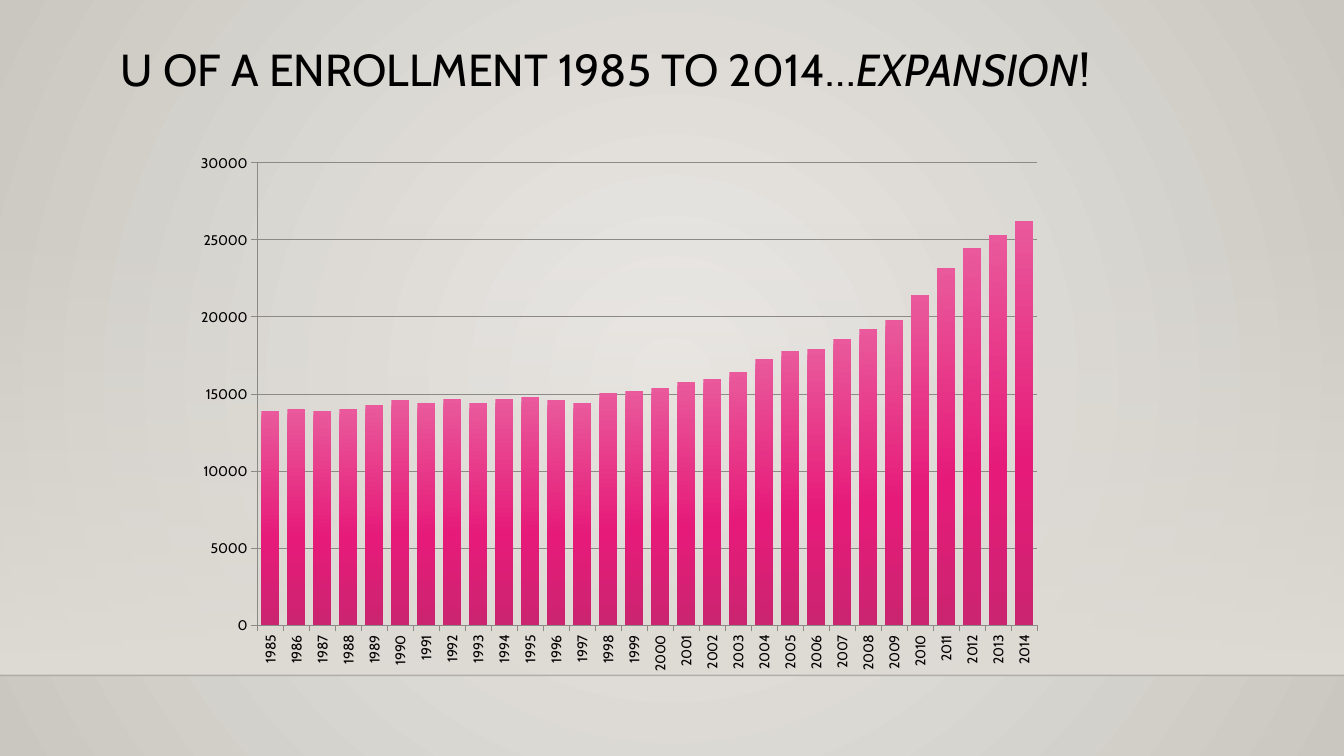
from dataclasses import dataclass

from lxml import etree
from pptx import Presentation
from pptx.chart.data import CategoryChartData
from pptx.dml.color import RGBColor
from pptx.enum.chart import XL_CHART_TYPE as ChartType, XL_TICK_MARK as TickMark
from pptx.enum.shapes import MSO_CONNECTOR as Connector, MSO_SHAPE as Shape
from pptx.enum.text import MSO_ANCHOR as Anchor, MSO_AUTO_SIZE as AutoSize, PP_ALIGN as Align
from pptx.oxml import parse_xml
from pptx.oxml.ns import nsdecls, qn
from pptx.util import Inches, Pt

FIRST_YEAR = 1985
ENROLLMENT = [
    13900, 14000, 13900, 14000, 14300, 14600, 14400, 14700, 14400, 14700,
    14800, 14600, 14400, 15100, 15200, 15400, 15800, 16000, 16400, 17300,
    17800, 17900, 18600, 19200, 19800, 21400, 23200, 24500, 25300, 26200,
]


@dataclass(frozen=True)
class Theme:
    font: str = "Cabin"
    title_size: int = 32
    label_size: int = 10
    text: str = "000000"
    rule: str = "000001"
    grid: str = "8C8A87"
    backdrop: tuple = ((0, "ECEAE7", 100), (100, "CAC7C1", 100))
    floor: tuple = ((0, "DFDBD5", 0), (100, "DFDBD5", 100))
    bar: tuple = ((0, "E9599B", 100), (60, "E61A79", 100), (100, "CB2571", 100))


class SlideBuilder:
    columns, rows = 80, 45

    def __init__(self, presentation, theme):
        self.theme = theme
        self.cell_width = presentation.slide_width / self.columns
        self.cell_height = presentation.slide_height / self.rows
        self.slide = presentation.slides.add_slide(presentation.slide_layouts[5])

    def place(self, column, row, width, height):
        return (int(column * self.cell_width), int(row * self.cell_height),
                int(width * self.cell_width), int(height * self.cell_height))

    def style_font(self, font, size):
        font.name = self.theme.font
        font.size = Pt(size)
        font.color.rgb = RGBColor.from_string(self.theme.text)

    def apply_gradient(self, fill, element, stops, radial=False):
        fill.solid()
        fill.fore_color.rgb = RGBColor.from_string(stops[0][1])
        solid = next(element.iter(qn("a:solidFill")))
        stop_xml = "".join(
            f'<a:gs pos="{position * 1000}"><a:srgbClr val="{colour}">'
            f'<a:alpha val="{alpha * 1000}"/></a:srgbClr></a:gs>'
            for position, colour, alpha in stops)
        direction = (
            '<a:path path="circle"><a:fillToRect l="50000" t="50000" r="50000" b="50000"/></a:path>'
            if radial else '<a:lin ang="5400000" scaled="0"/>')
        solid.getparent().replace(solid, parse_xml(
            f'<a:gradFill {nsdecls("a")} rotWithShape="1">'
            f'<a:gsLst>{stop_xml}</a:gsLst>{direction}</a:gradFill>'))

    def backdrop(self):
        self.apply_gradient(self.slide.background.fill, self.slide.element,
                            self.theme.backdrop, radial=True)

    def panel(self, *cells):
        shape = self.slide.shapes.add_shape(Shape.RECTANGLE, *self.place(*cells))
        shape.shadow.inherit = False
        self.apply_gradient(shape.fill, shape.element, self.theme.floor)
        shape.line.fill.background()

    def rule(self, row):
        left, top, width, _ = self.place(0, row, self.columns, 0)
        connector = self.slide.shapes.add_connector(
            Connector.STRAIGHT, left, top, left + width, top)
        connector.line.width = Pt(1)
        connector.line.color.rgb = RGBColor.from_string(self.theme.rule)
        properties = connector.element.spPr
        colour = next(properties.iter(qn("a:srgbClr")))
        etree.SubElement(colour, qn("a:alpha")).set("val", "20000")
        etree.SubElement(properties, qn("a:effectLst"))

    def title(self, pieces, *cells):
        title = self.slide.shapes.title
        title.left, title.top, title.width, title.height = self.place(*cells)
        text_frame = title.text_frame
        text_frame.word_wrap = True
        text_frame.auto_size = AutoSize.NONE
        text_frame.vertical_anchor = Anchor.TOP
        paragraph = text_frame.paragraphs[0]
        paragraph.alignment = Align.LEFT
        paragraph.line_spacing = 0.9
        for text, italic in pieces:
            run = paragraph.add_run()
            run.text = text
            self.style_font(run.font, self.theme.title_size)
            run.font.italic = italic

    def column_chart(self, categories, values, plot_area, *cells):
        data = CategoryChartData(number_format="0")
        data.categories = categories
        data.add_series("Series 1", values)
        chart = self.slide.shapes.add_chart(
            ChartType.COLUMN_CLUSTERED, *self.place(*cells), data).chart
        chart.has_legend = False
        chart.has_title = False
        self.style_font(chart.font, self.theme.label_size)
        plot = chart.plots[0]
        plot.gap_width, plot.overlap = 46, -2
        plot.vary_by_categories = False
        series = plot.series[0]
        self.apply_gradient(series.format.fill, series._element, self.theme.bar)
        grid_colour = RGBColor.from_string(self.theme.grid)
        value_axis, category_axis = chart.value_axis, chart.category_axis
        value_axis.minimum_scale, value_axis.maximum_scale = 0, 30000
        value_axis.major_unit = 5000
        value_axis.has_major_gridlines = True
        value_axis.tick_labels.number_format = "0"
        value_axis.tick_labels.number_format_is_linked = False
        for axis in (value_axis, category_axis):
            axis.major_tick_mark = TickMark.OUTSIDE
            axis.minor_tick_mark = TickMark.NONE
            axis.format.line.color.rgb = grid_colour
            axis.format.line.width = Pt(0.75)
            self.style_font(axis.tick_labels.font, self.theme.label_size)
        gridline = value_axis.major_gridlines.format.line
        gridline.color.rgb = grid_colour
        gridline.width = Pt(0.75)
        label_body = next(category_axis._element.iter(qn("a:bodyPr")))
        label_body.set("rot", "-5400000")
        label_body.set("vert", "horz")
        self.fix_plot_area(chart, plot_area)

    def fix_plot_area(self, chart, plot_area):
        area = next(chart._chartSpace.iter(qn("c:plotArea")))
        for layout in area.findall(qn("c:layout")):
            area.remove(layout)
        sizes = "".join(f'<c:{name} val="{share}"/>'
                        for name, share in zip("xywh", plot_area))
        area.insert(0, parse_xml(
            f'<c:layout {nsdecls("c")}><c:manualLayout><c:layoutTarget val="inner"/>'
            f'<c:xMode val="edge"/><c:yMode val="edge"/>{sizes}'
            f'</c:manualLayout></c:layout>'))


def main():
    presentation = Presentation()
    presentation.slide_width = Inches(13.33)
    presentation.slide_height = Inches(7.5)
    builder = SlideBuilder(presentation, Theme())
    floor_top, floor_height = 13.26, 26.94
    builder.backdrop()
    builder.panel(0, floor_top, builder.columns, floor_height)
    builder.rule(floor_top + floor_height)
    years = [str(FIRST_YEAR + index) for index in range(len(ENROLLMENT))]
    builder.column_chart(years, ENROLLMENT, (0.116, 0.041, 0.829, 0.798),
                         8.82, 8.28, 56, 34.5)
    builder.title([("U OF A ENROLLMENT 1985 TO 2014…", False),
                   ("EXPANSION", True), ("!", False)],
                  6.6, 2.52, 63, 8.58)
    presentation.save("out.pptx")


if __name__ == "__main__":
    main()
